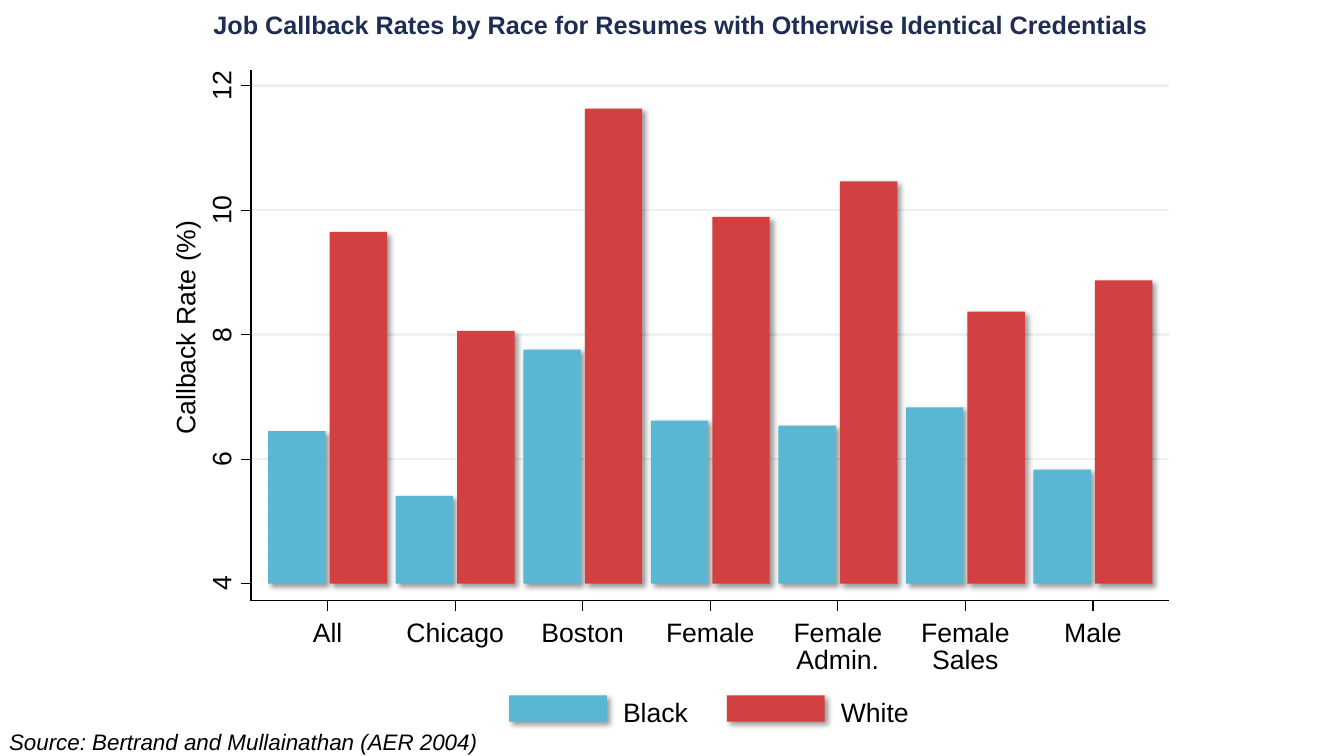
from lxml import etree
from pptx import Presentation, util as u
from pptx.dml.color import RGBColor
from pptx.enum import shapes, text
from pptx.oxml import parse_xml
from pptx.oxml.ns import nsdecls, qn

BLACK = RGBColor(0x00, 0x00, 0x00)
NAVY = RGBColor(0x1E, 0x2D, 0x53)
GRID = RGBColor(0xEA, 0xF2, 0xF3)
BLUE = RGBColor(0x5A, 0xB7, 0xD4)
RED = RGBColor(0xD3, 0x40, 0x41)

SHADOW = (
    f'<a:effectLst {nsdecls("a")}>'
    '<a:outerShdw blurRad="50800" dist="38100" dir="2700000" algn="tl" rotWithShape="0">'
    '<a:srgbClr val="000000"><a:alpha val="40000"/></a:srgbClr>'
    '</a:outerShdw></a:effectLst>'
)

# Callback rates in percent: group, Black, White
rates = [
    ("All", 6.45, 9.65),
    ("Chicago", 5.41, 8.06),
    ("Boston", 7.76, 11.63),
    ("Female", 6.62, 9.89),
    ("Female\nAdmin.", 6.54, 10.46),
    ("Female\nSales", 6.83, 8.37),
    ("Male", 5.83, 8.87),
]
series = [("Black", BLUE), ("White", RED)]

# Plot geometry in inches
plot_left, plot_right, plot_top, plot_bottom = 2.49, 11.59, 0.69, 5.96
base_rate, base_y, per_point = 4, 5.79, 0.6175
first_group, group_step = 3.25, 1.265
bar_width, bar_step = 0.57, 0.61
tick, row_height, label_step = 0.1, 0.35, 0.27

deck = Presentation()
deck.slide_width, deck.slide_height = u.Inches(13.33), u.Inches(7.5)
slide = deck.slides.add_slide(deck.slide_layouts[6])


def rule(x1, y1, x2, y2, color=BLACK, weight=0.88):
    line = slide.shapes.add_connector(
        shapes.MSO_CONNECTOR.STRAIGHT, *map(u.Inches, (x1, y1, x2, y2)))
    line.line.color.rgb = color
    line.line.width = u.Pt(weight)
    etree.SubElement(line._element.spPr, qn("a:effectLst"))


def label(words, left, top, width, height=row_height, size=19, color=BLACK,
          align=text.PP_ALIGN.CENTER, rotation=0):
    box = slide.shapes.add_textbox(*map(u.Inches, (left, top, width, height)))
    box.rotation = rotation
    frame = box.text_frame
    frame.word_wrap = False
    frame.margin_left = frame.margin_right = frame.margin_top = frame.margin_bottom = 0
    line = frame.paragraphs[0]
    line.text = words
    line.alignment = align
    line.font.name, line.font.size = "Arial", u.Pt(size)
    line.font.color.rgb = color
    return line


# Gridlines
axis_rates = range(4, 13, 2)
for rate in axis_rates[1:]:
    y = base_y - (rate - base_rate) * per_point
    rule(plot_left, y, plot_right, y, GRID, 1.75)

# Bars and legend keys: left, top, width, height, colour
swatches = []
for s, (race, color) in enumerate(series):
    for g, (group, *values) in enumerate(rates):
        height = (values[s] - base_rate) * per_point
        left = first_group + g * group_step - 0.59 + s * bar_step
        swatches.append((left, base_y - height, bar_width, height, color))
    key_left = 5.05 + s * 2.16
    swatches.append((key_left, 6.9, 0.97, 0.26, color))
    label(race, key_left + 1.13, 6.9, 0.76, align=text.PP_ALIGN.LEFT)

for *place, color in swatches:
    swatch = slide.shapes.add_shape(
        shapes.MSO_SHAPE.RECTANGLE, *map(u.Inches, place))
    swatch.fill.solid()
    swatch.fill.fore_color.rgb = color
    swatch.line.fill.background()
    swatch._element.spPr.append(parse_xml(SHADOW))

# Rate axis
rule(plot_left, plot_bottom, plot_left, plot_top)
for rate in axis_rates:
    y = base_y - (rate - base_rate) * per_point
    rule(plot_left, y, plot_left - tick, y)
    label(str(rate), 2, y - row_height / 2, 0.41, rotation=270)
label("Callback Rate (%)", 0.76, 3.09, 2.15, 0.32, rotation=270)

# Group axis
rule(plot_left, plot_bottom, plot_right, plot_bottom)
for g, (group, *values) in enumerate(rates):
    x = first_group + g * group_step
    rule(x, plot_bottom, x, plot_bottom + tick)
    for row, words in enumerate(group.split("\n")):
        label(words, x - 0.5, 6.11 + row * label_step, 1)

# Title and source
title = label("Job Callback Rates by Race for Resumes with Otherwise Identical Credentials",
              2.11, 0.09, 9.28, 0.3, size=18, color=NAVY)
title.font.bold = True
source = label("Source: Bertrand and Mullainathan (AER 2004)",
               0.09, 7.22, 4.7, 0.27, size=16, align=text.PP_ALIGN.LEFT)
source.font.italic = True

deck.save("out.pptx")
